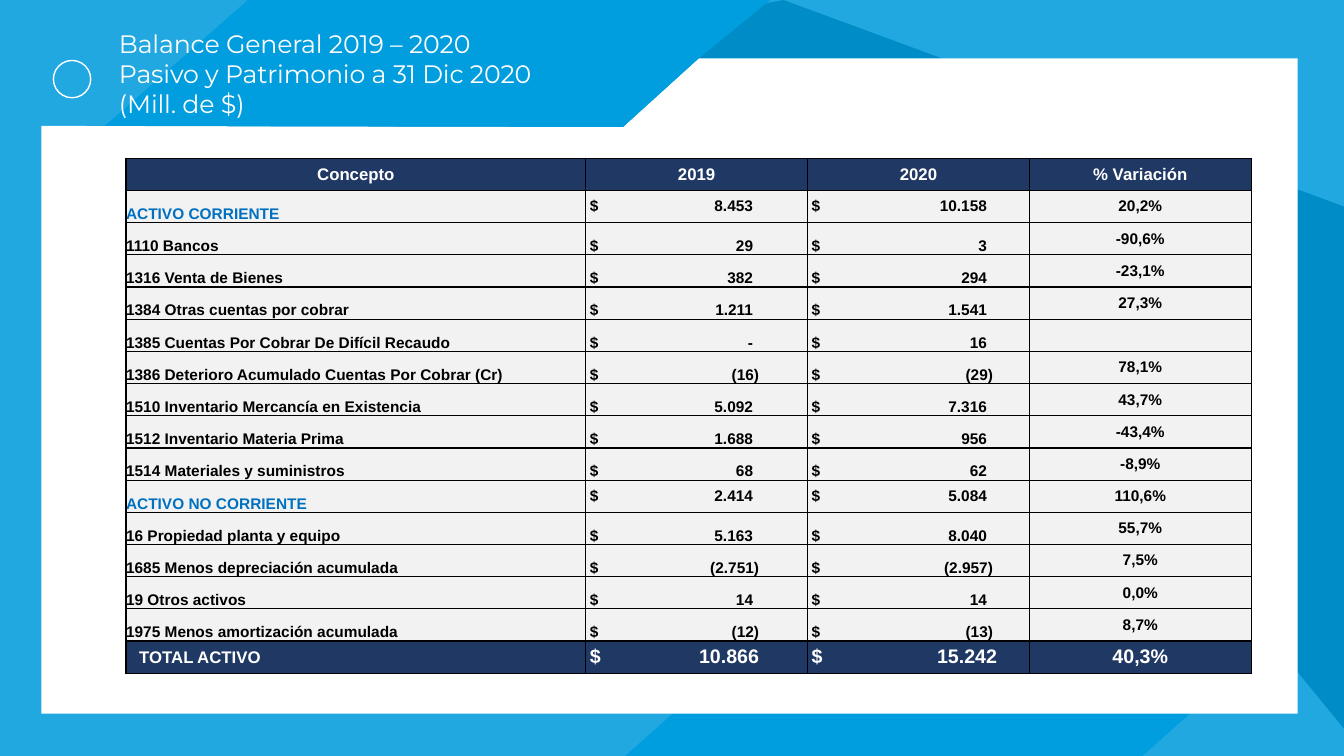
"""Build the balance sheet slide with its blue geometric frame and table."""
from copy import deepcopy

from lxml.etree import SubElement
from pptx import Presentation
from pptx.dml.color import RGBColor
from pptx.enum.shapes import MSO_SHAPE
from pptx.enum.text import MSO_ANCHOR, MSO_AUTO_SIZE, PP_ALIGN
from pptx.oxml import parse_xml
from pptx.oxml.ns import nsdecls, qn
from pptx.util import Inches, Pt

COLORS = {"sky": "21A8E0", "blue": "009DDF", "deep": "008CC6", "white": "FFFFFF",
          "navy": "203864", "gray": "F2F2F2", "accent": "0070C0", "black": "000000"}


def rgb(name):
    return RGBColor.from_string(COLORS[name])


def style(r, size, color, font="Arial", bold=True):
    for key, value in {"name": font, "size": Pt(size), "bold": bold}.items():
        setattr(r.font, key, value)
    r.font.color.rgb = rgb(color)


prs = Presentation()
prs.slide_width, prs.slide_height = Inches(13.33), Inches(7.5)
s = prs.slides.add_slide(prs.slide_layouts[5])

FRAME = [
    ("sky", [[(0, 7.5), (13.33, 7.5), (13.33, 0), (0, 0)]]),
    ("blue", [[(12.79, 6.25), (7.61, 6.25), (6.2, 7.5), (11.33, 7.5), (12.08, 6.83)]]),
    ("deep", [[(7.77, 0), (1.04, 1.25), (12.75, 6.52), (13.33, 7.23), (13.33, 2.05)]]),
    ("white", [[(0.41, 1.25), (0.41, 7.08), (12.87, 7.08), (12.87, 1.26), (6.18, 1.26)],
               [(12.87, 0.58), (6.93, 0.58), (6.18, 1.26), (12.87, 1.26)]]),
    ("blue", [[(7.64, 0), (2.46, 0), (1.04, 1.25), (6.18, 1.26), (6.93, 0.58)]]),
]
for color, contours in FRAME:
    outlines = [[(Inches(x), Inches(y)) for x, y in points] for points in contours]
    fb = s.shapes.build_freeform(*outlines[0][0])
    for i, points in enumerate(outlines):
        if i:
            fb.move_to(*points[0])
        fb.add_line_segments(points[1:], close=True)
    sp = fb.convert_to_shape()
    sp.shadow.inherit = False
    sp.fill.solid()
    sp.fill.fore_color.rgb = rgb(color)
    sp.line.fill.background()

ring = s.shapes.add_shape(MSO_SHAPE.OVAL, Inches(0.53), Inches(0.6), Inches(0.37), Inches(0.37))
ring.shadow.inherit = False
ring.fill.background()
ring.line.color.rgb = rgb("white")
ring.line.width = Pt(1)

title = s.shapes.title
title.element.getparent().append(title.element)
for key, value in {"left": 1.08, "top": 0.23, "width": 6.67, "height": 1.01}.items():
    setattr(title, key, Inches(value))
tf = title.text_frame
tf.text = "Balance General 2019 – 2020\vPasivo y Patrimonio a 31 Dic 2020\v(Mill. de $)"
tf.word_wrap = True
tf.auto_size = MSO_AUTO_SIZE.SHAPE_TO_FIT_TEXT
tf.vertical_anchor = MSO_ANCHOR.TOP
p = tf.paragraphs[0]
p.alignment = PP_ALIGN.LEFT
p.line_spacing = 1.0
for r in p.runs:
    style(r, 18, "white", "Montserrat", False)
    r.font._element.set("spc", "-10")
for br in p._p.findall(qn("a:br")):
    br.append(deepcopy(p.runs[0].font._element))

ROWS = [
    ("Concepto", "2019", "2020", "% Variación"),
    ("ACTIVO CORRIENTE", "8.453", "10.158", "20,2%"),
    ("1110 Bancos", "29", "3", "-90,6%"),
    ("1316 Venta de Bienes", "382", "294", "-23,1%"),
    ("1384 Otras cuentas por cobrar", "1.211", "1.541", "27,3%"),
    ("1385 Cuentas Por Cobrar De Difícil Recaudo", "-", "16", ""),
    ("1386 Deterioro Acumulado Cuentas Por Cobrar (Cr)", "(16)", "(29)", "78,1%"),
    ("1510 Inventario Mercancía en Existencia", "5.092", "7.316", "43,7%"),
    ("1512 Inventario Materia Prima", "1.688", "956", "-43,4%"),
    ("1514 Materiales y suministros", "68", "62", "-8,9%"),
    ("ACTIVO NO CORRIENTE", "2.414", "5.084", "110,6%"),
    ("16 Propiedad planta y equipo", "5.163", "8.040", "55,7%"),
    ("1685 Menos depreciación acumulada", "(2.751)", "(2.957)", "7,5%"),
    ("19 Otros activos", "14", "14", "0,0%"),
    ("1975 Menos amortización acumulada", "(12)", "(13)", "8,7%"),
    ("TOTAL ACTIVO", "10.866", "15.242", "40,3%"),
]
WIDTHS = [4.56, 2.2, 2.2, 2.2]
NUMBER_TABS = {1: 1.62, 2: 1.74}
TOTAL_TABS = {1: 1.68, 2: 1.84}
HEIGHT = 5.11
last = len(ROWS) - 1

table = s.shapes.add_table(len(ROWS), len(WIDTHS), Inches(1.25), Inches(1.57),
                           Inches(sum(WIDTHS)), Inches(HEIGHT)).table
table.first_row = table.horz_banding = False
for column, width in zip(table.columns, WIDTHS):
    column.width = Inches(width)

for i, row in enumerate(ROWS):
    table.rows[i].height = Inches(HEIGHT / len(ROWS))
    band = i in (0, last)
    section = row[0].startswith("ACTIVO")
    for j, text in enumerate(row):
        cell = table.cell(i, j)
        amount = j in NUMBER_TABS and i > 0
        left = 0.04 if amount else 0.13 if band and j == 0 else 0
        right = 0.13 if band and j == 0 else 0
        low = not band and (j == 0 or amount and not section)
        for key, value in {"margin_left": Inches(left), "margin_right": Inches(right),
                           "margin_top": 0, "margin_bottom": 0,
                           "vertical_anchor": MSO_ANCHOR.BOTTOM if low else MSO_ANCHOR.MIDDLE}.items():
            setattr(cell, key, value)
        cell.fill.solid()
        cell.fill.fore_color.rgb = rgb("navy" if band else "gray")
        tcPr = cell._tc.get_or_add_tcPr()
        for k, side in enumerate("LRTB"):
            tcPr.insert(k, parse_xml(
                f'<a:ln{side} w="12700" {nsdecls("a")}><a:solidFill>'
                f'<a:srgbClr val="{COLORS["black"]}"/></a:solidFill></a:ln{side}>'))
        if not text:
            continue
        p = cell.text_frame.paragraphs[0]
        p.alignment = PP_ALIGN.CENTER if i == 0 or j == 3 else PP_ALIGN.LEFT
        if amount:
            hang = 0.06 if text.endswith(")") else 0
            stop = TOTAL_TABS[j] if i == last else NUMBER_TABS[j] + hang
            tabs = SubElement(p._p.get_or_add_pPr(), qn("a:tabLst"))
            SubElement(tabs, qn("a:tab"), pos=str(Inches(stop)), algn="r")
        r = p.add_run()
        r.text = f"$\t{text}" if amount else text
        size = 14 if i == last and j else 12 if band else 11
        style(r, size, "white" if band else "accent" if section and j == 0 else "black")

prs.save("out.pptx")
